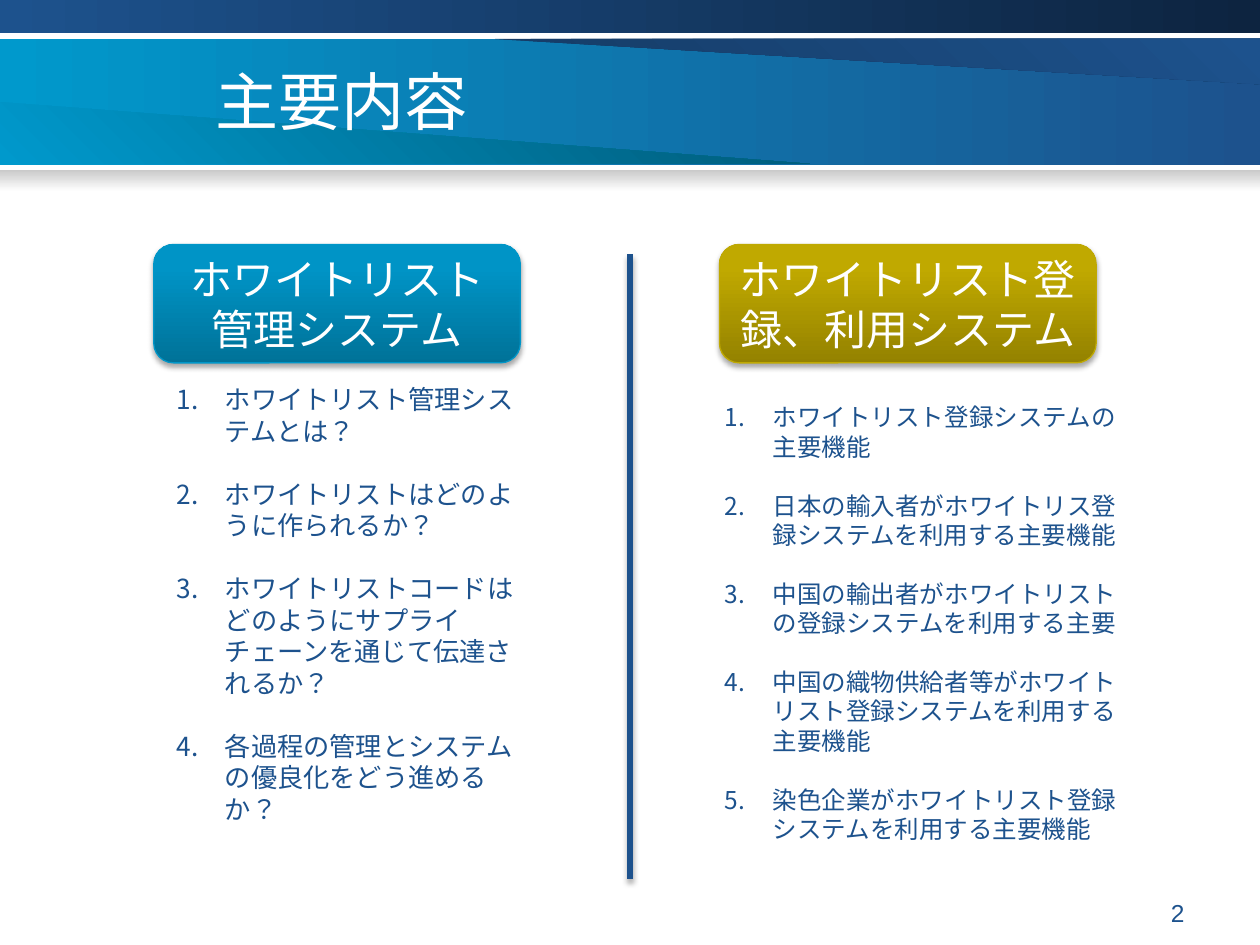
from lxml import etree
from pptx import Presentation
from pptx.dml.color import RGBColor
from pptx.enum.lang import MSO_LANGUAGE_ID
from pptx.enum.shapes import MSO_CONNECTOR, MSO_SHAPE
from pptx.enum.text import MSO_ANCHOR, PP_ALIGN
from pptx.oxml import parse_xml
from pptx.oxml.ns import qn
from pptx.util import Inches, Pt

RECT, ROUND = MSO_SHAPE.RECTANGLE, MSO_SHAPE.ROUNDED_RECTANGLE
LEFT, CENTER, RIGHT = PP_ALIGN.LEFT, PP_ALIGN.CENTER, PP_ALIGN.RIGHT
TOP, MIDDLE = MSO_ANCHOR.TOP, MSO_ANCHOR.MIDDLE
JAPANESE = MSO_LANGUAGE_ID.JAPANESE
LATIN, CJK = "Arial", "Noto Sans CJK JP"
C = {"white": "FFFFFF", "blue": "1D528D", "navy": "153B65", "ink": "0D2440",
     "cyan": "0099CC", "teal": "005A78", "grey": "CACACA",
     "cyan_edge": "0096C8", "gold_edge": "BFA902"}
CYAN_BOX = [(0, "007298"), (80, "0094C6"), (100, "0095C7")]
GOLD_BOX = [(0, "948200"), (80, "C0A900"), (100, "C1AA00")]
A_NS = "http://schemas.openxmlformats.org/drawingml/2006/main"
SHADOW = (f'<a:effectLst xmlns:a="{A_NS}">'
          '<a:outerShdw blurRad="39370" dist="22860" dir="5400000" rotWithShape="0">'
          '<a:srgbClr val="000000"><a:alpha val="35000"/></a:srgbClr>'
          '</a:outerShdw></a:effectLst>')


def write(tf, paragraphs, size=14, color="white", font=LATIN, align=LEFT,
          anchor=MIDDLE, numbered=False, leading=None):
    """Fill a text frame; leading is the line height in points."""
    tf.word_wrap = True
    tf.vertical_anchor = anchor
    for i, text in enumerate(paragraphs):
        p = tf.paragraphs[0] if i == 0 else tf.add_paragraph()
        p.alignment = align
        if leading:
            p.line_spacing = Pt(leading)
        if numbered:
            if i:
                p.space_before = Pt(leading)
            pPr = p._p.get_or_add_pPr()
            pPr.set("marL", str(Inches(0.38)))
            pPr.set("indent", str(-Inches(0.38)))
            etree.SubElement(pPr, qn("a:buFont")).set("typeface", "+mj-lt")
            etree.SubElement(pPr, qn("a:buAutoNum")).set("type", "arabicPeriod")
        r = p.add_run()
        r.text = text
        r.font.size = Pt(size)
        r.font.name = font
        r.font.language_id = JAPANESE
        r.font.color.rgb = RGBColor.from_string(C[color])
        etree.SubElement(r._r.get_or_add_rPr(), qn("a:ea")).set("typeface", CJK)


def shade(s, stops, angle):
    """Give a shape a gradient (angle counter-clockwise), no line, no shadow."""
    s.shadow.inherit = False
    s.line.fill.background()
    s.fill.gradient()
    s.fill.gradient_angle = angle
    gs_list = s._element.spPr.find(".//" + qn("a:gsLst"))
    for gs in list(gs_list):
        gs_list.remove(gs)
    for pos, color in stops:
        gs = etree.SubElement(gs_list, qn("a:gs"), pos=str(pos * 1000))
        etree.SubElement(gs, qn("a:srgbClr"), val=color)


prs = Presentation()
prs.slide_width, prs.slide_height = Inches(10), Inches(7.5)
W = prs.slide_width
slide = prs.slides.add_slide(prs.slide_layouts[5])
shapes = slide.shapes

# Header bands: top, height, left colour, right colour, angle
for top, height, start, end, angle in [
    (0.31, 1, "cyan", "blue", 0),
    (0, 0.26, "blue", "ink", 0),
    (1.35, 0.17, "grey", "white", 270),
]:
    s = shapes.add_shape(RECT, 0, Inches(top), W, Inches(height))
    shade(s, [(0, C[start]), (100, C[end])], angle)

# Slanted wedges inside the title band
for points, start, end in [
    ([(3.93, 0.31), (10, 0.67), (10, 0.31)], "navy", "blue"),
    ([(0, 0.81), (6.43, 1.3), (0, 1.3)], "cyan", "teal"),
]:
    points = [(Inches(x), Inches(y)) for x, y in points]
    builder = shapes.build_freeform(*points[0])
    builder.add_line_segments(points[1:], close=True)
    shade(builder.convert_to_shape(), [(0, C[start]), (100, C[end])], 45)

# Title, brought in front of the bands
title = shapes.title
title.left, title.top = Inches(1.61), Inches(0.44)
title.width, title.height = Inches(6.14), Inches(0.71)
write(title.text_frame, ["主要内容"], size=36, font=CJK)
title._element.getparent().append(title._element)

# Two columns: heading box above a numbered list
columns = [
    dict(head="ホワイトリスト管理システム", head_x=1.22, head_w=2.91,
         stops=CYAN_BOX, edge="cyan_edge",
         x=1.14, w=3.39, h=4.17, size=15, anchor=MIDDLE, bottom=0.55,
         items=["ホワイトリスト管理システムとは？",
                "ホワイトリストはどのように作られるか？",
                "ホワイトリストコードはどのようにサプライチェーンを通じて伝達されるか？",
                "各過程の管理とシステムの優良化をどう進めるか？"]),
    dict(head="ホワイトリスト登録、利用システム", head_x=5.71, head_w=2.99,
         stops=GOLD_BOX, edge="gold_edge",
         x=5.47, w=3.78, h=4.1, size=14, anchor=TOP, bottom=0.05,
         items=["ホワイトリスト登録システムの主要機能",
                "日本の輸入者がホワイトリス登録システムを利用する主要機能",
                "中国の輸出者がホワイトリストの登録システムを利用する主要",
                "中国の織物供給者等がホワイトリスト登録システムを利用する主要機能",
                "染色企業がホワイトリスト登録システムを利用する主要機能"]),
]
for col in columns:
    s = shapes.add_shape(ROUND, Inches(col["x"]), Inches(2.96),
                         Inches(col["w"]), Inches(col["h"]))
    s.shadow.inherit = False
    s.fill.solid()
    s.fill.fore_color.rgb = RGBColor.from_string(C["white"])
    s.line.color.rgb = RGBColor.from_string(C["white"])
    s.line.width = Pt(2)
    s.text_frame.margin_bottom = Inches(col["bottom"])
    write(s.text_frame, col["items"], size=col["size"], color="blue",
          anchor=col["anchor"], numbered=True, leading=col["size"] * 1.2)

    s = shapes.add_shape(ROUND, Inches(col["head_x"]), Inches(1.94),
                         Inches(col["head_w"]), Inches(0.94))
    shade(s, col["stops"], 90)
    s.line.color.rgb = RGBColor.from_string(C[col["edge"]])
    s.line.width = Pt(0.75)
    spPr = s._element.spPr
    spPr.replace(spPr.find(qn("a:effectLst")), parse_xml(SHADOW))
    write(s.text_frame, [col["head"]], size=24, align=CENTER, leading=28.8)

# Divider between the columns
line = shapes.add_connector(MSO_CONNECTOR.STRAIGHT, W // 2, Inches(2.02),
                            W // 2, Inches(6.98))
line.line.color.rgb = RGBColor.from_string(C["blue"])
line.line.width = Pt(3)
line._element.spPr.append(parse_xml(SHADOW))

# Page number
tb = shapes.add_textbox(Inches(7.17), Inches(7.08), Inches(2.33), Inches(0.27))
write(tb.text_frame, ["2"], color="blue", align=RIGHT, anchor=TOP)

prs.save("out.pptx")
